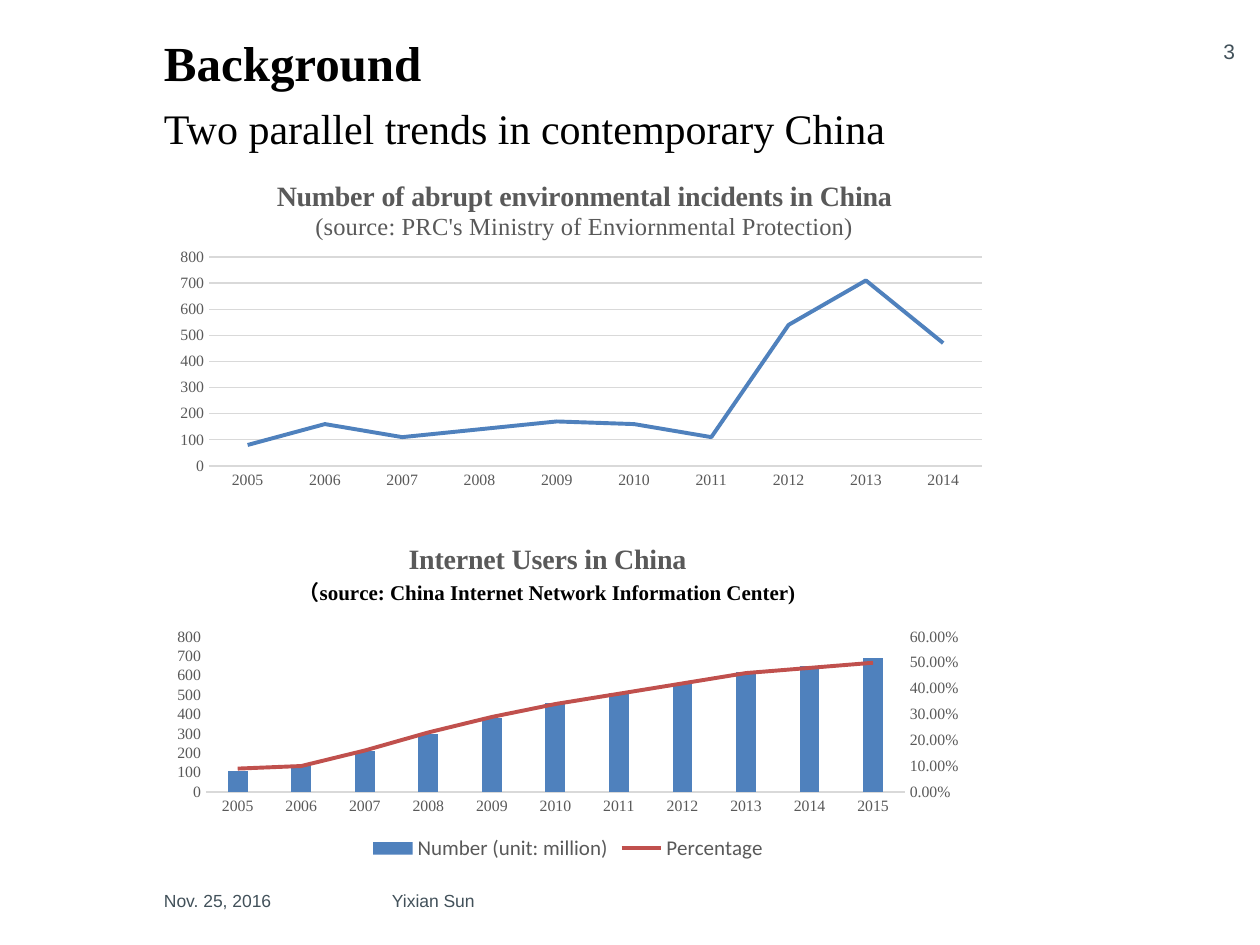
from copy import deepcopy

from lxml import etree
from pptx import Presentation
from pptx.chart.data import CategoryChartData
from pptx.dml.color import RGBColor
from pptx.enum import chart as charts, text
from pptx.oxml import parse_xml
from pptx.oxml.ns import nsdecls, qn
from pptx.util import Emu, Pt

PX = 914400 // 126
SERIF, SANS, LEGEND_FONT = "Times New Roman", "Arial", "Calibri"
BLACK = RGBColor(0x00, 0x00, 0x00)
SLATE = RGBColor(0x42, 0x51, 0x5A)
GRAY = RGBColor(0x59, 0x59, 0x59)
PALE = RGBColor(0xD9, 0xD9, 0xD9)
BLUE = RGBColor(0x4F, 0x81, 0xBD)
RED = RGBColor(0xC0, 0x50, 0x4D)

# Content: boxes are left, top, width, height in px
TITLE = ("Background", (164, 26, 1002, 68))
# text, box, size, font, colour, anchor, alignment, left inset
LEFT, CENTER = text.PP_ALIGN.LEFT, text.PP_ALIGN.CENTER
TOP, MIDDLE = text.MSO_ANCHOR.TOP, text.MSO_ANCHOR.MIDDLE
TEXTS = [
    ("Two parallel trends in contemporary China", (164, 96, 1002, 79), 24, SERIF, BLACK, TOP, LEFT, 0),
    ("Nov. 25, 2016", (164, 876, 228, 50), 10, SANS, SLATE, MIDDLE, LEFT, 0),
    ("Yixian Sun", (392, 876, 546, 50), 10, SANS, SLATE, MIDDLE, LEFT, 0),
    ("3", (1197, 26, 64, 50), 12, SANS, SLATE, MIDDLE, CENTER, 13),
]
INCIDENTS = {
    "box": (164, 156, 835, 340),
    "plot": (209, 257, 773, 209),
    "title_at": (273, 175),
    # text, size, bold, colour
    "title": [("Number of abrupt environmental incidents in China", 16, True, GRAY),
              ("(source: PRC's Ministry of Enviornmental Protection)", 14, False, GRAY)],
    "years": range(2005, 2015),
    "series": [("Series 1", "General", [80, 160, 110, 140, 170, 160, 110, 540, 710, 470])],
}
USERS = {
    "box": (161, 532, 814, 334),
    "plot": (206, 637, 699, 155),
    "title_at": (295, 538),
    "title": [("Internet Users in China", 16, True, GRAY),
              ("（source: China Internet Network Information Center)", 12, True, BLACK)],
    "years": range(2005, 2016),
    "series": [
        ("Number (unit: million)", "General",
         [110, 140, 210, 300, 380, 460, 510, 560, 620, 650, 690]),
        ("Percentage", "0.00%",
         [0.09, 0.1, 0.16, 0.23, 0.29, 0.34, 0.38, 0.42, 0.46, 0.48, 0.5]),
    ],
}


def emu(box):
    return [Emu(value * PX) for value in box]


def set_font(font, size, name, color, bold=False):
    font.size, font.name, font.bold = Pt(size), name, bold
    font.color.rgb = color


def fill_text(shape, words, size, font, color, anchor, align, inset, bold=False):
    frame = shape.text_frame
    frame.word_wrap = True
    frame.auto_size = text.MSO_AUTO_SIZE.NONE
    frame.vertical_anchor = anchor
    frame.margin_left = Emu(inset * PX)
    frame.text = words
    paragraph = frame.paragraphs[0]
    paragraph.alignment = align
    set_font(paragraph.font, size, font, color, bold)


def layout_xml(chart_box, box, inner=False):
    """Manual layout as fractions of the chart frame."""
    left, top, width, height = chart_box
    parts = [("xMode", "edge"), ("yMode", "edge"),
             ("x", round((box[0] - left) / width, 4)), ("y", round((box[1] - top) / height, 4))]
    if inner:
        parts = [("layoutTarget", "inner")] + parts
        parts += [("w", round(box[2] / width, 4)), ("h", round(box[3] / height, 4))]
    body = "".join(f'<c:{tag} val="{value}"/>' for tag, value in parts)
    return parse_xml(f'<c:layout {nsdecls("c")}><c:manualLayout>{body}</c:manualLayout></c:layout>')


def style_axis(axis, line):
    axis.major_tick_mark = axis.minor_tick_mark = charts.XL_TICK_MARK.NONE
    set_font(axis.tick_labels.font, 9, SERIF, GRAY)
    if line:
        axis.format.line.color.rgb = PALE
        axis.format.line.width = Pt(0.75)
    else:
        axis.format.line.fill.background()


def style_line(plot, color):
    plot.vary_by_categories = False
    series = plot.series[0]
    series.smooth = False
    series.marker.style = charts.XL_MARKER_STYLE.NONE
    series.format.line.color.rgb = color
    series.format.line.width = Pt(2.25)


def add_chart(slide, content, kind):
    data = CategoryChartData()
    data.categories = [str(year) for year in content["years"]]
    for name, number_format, values in content["series"]:
        data.add_series(name, values, number_format)
    chart = slide.shapes.add_chart(kind, *emu(content["box"]), data).chart
    set_font(chart.font, 10, SERIF, BLACK)
    chart.has_legend = False

    # Chart title
    chart.has_title = True
    frame = chart.chart_title.text_frame
    for index, (words, size, bold, color) in enumerate(content["title"]):
        paragraph = frame.add_paragraph() if index else frame.paragraphs[0]
        run = paragraph.add_run()
        run.text = words
        set_font(run.font, size, SERIF, color, bold)
    title = chart.chart_title._element
    for old in title.findall(qn("c:layout")):
        title.remove(old)
    title.find(qn("c:tx")).addnext(layout_xml(content["box"], content["title_at"]))
    chart.chart_title.include_in_layout = False

    # Plot area and axes
    area = chart._chartSpace.chart.plotArea
    for old in area.findall(qn("c:layout")):
        area.remove(old)
    area.insert(0, layout_xml(content["box"], content["plot"], inner=True))
    style_axis(chart.category_axis, line=True)
    style_axis(chart.value_axis, line=False)
    chart.value_axis.maximum_scale, chart.value_axis.minimum_scale = 800, 0
    chart.value_axis.major_unit = 100
    chart.value_axis.has_major_gridlines = False
    return chart


def move_to_right_axis(chart):
    """Turn the second column series into a line on a right-hand axis."""
    area = chart._chartSpace.chart.plotArea
    bars = area.find(qn("c:barChart"))
    series = bars.findall(qn("c:ser"))[1]
    for old in series.findall(qn("c:invertIfNegative")):
        series.remove(old)
    lines = parse_xml(f'<c:lineChart {nsdecls("c")}><c:grouping val="standard"/>'
                      '<c:varyColors val="0"/><c:marker val="1"/>'
                      '<c:axId val="501"/><c:axId val="502"/></c:lineChart>')
    lines.insert(2, series)
    bars.addnext(lines)

    years, values = (deepcopy(area.find(qn(tag))) for tag in ("c:catAx", "c:valAx"))
    settings = [
        (years, {"axId": "501", "crossAx": "502", "delete": "1"}),
        (values, {"axId": "502", "crossAx": "501", "axPos": "r", "crosses": "max", "majorUnit": "0.1"}),
    ]
    last = area.findall(qn("c:valAx"))[-1]
    for axis, changes in settings:
        for tag, value in changes.items():
            axis.find(qn(f"c:{tag}")).set("val", value)
        last.addnext(axis)
        last = axis
    values.find(qn("c:scaling")).find(qn("c:max")).set("val", "0.6")
    number_format = values.find(qn("c:numFmt"))
    if number_format is None:
        number_format = etree.Element(qn("c:numFmt"))
        values.find(qn("c:majorTickMark")).addprevious(number_format)
    number_format.set("formatCode", "0.00%")
    number_format.set("sourceLinked", "0")


presentation = Presentation()
presentation.slide_width, presentation.slide_height = emu((1260, 945))
slide = presentation.slides.add_slide(presentation.slide_layouts[5])

# Title and text lines
heading = slide.shapes.title
heading.left, heading.top, heading.width, heading.height = emu(TITLE[1])
fill_text(heading, TITLE[0], 28, SERIF, BLACK, TOP, LEFT, 0, bold=True)
for words, box, *style in TEXTS:
    fill_text(slide.shapes.add_textbox(*emu(box)), words, *style)

# Internet users: columns with a percentage line
users = add_chart(slide, USERS, charts.XL_CHART_TYPE.COLUMN_CLUSTERED)
move_to_right_axis(users)
columns, percentage = users.plots
columns.vary_by_categories = False
columns.gap_width, columns.overlap = 219, -27
columns.series[0].format.fill.solid()
columns.series[0].format.fill.fore_color.rgb = BLUE
style_line(percentage, RED)
users.has_legend = True
users.legend.position = charts.XL_LEGEND_POSITION.BOTTOM
users.legend.include_in_layout = False
set_font(users.legend.font, 12, LEGEND_FONT, GRAY)

# Environmental incidents: one line over gridlines
incidents = add_chart(slide, INCIDENTS, charts.XL_CHART_TYPE.LINE)
style_line(incidents.plots[0], BLUE)
incidents.value_axis.has_major_gridlines = True
gridline = incidents.value_axis.major_gridlines.format.line
gridline.color.rgb, gridline.width = PALE, Pt(0.75)

presentation.save("out.pptx")
